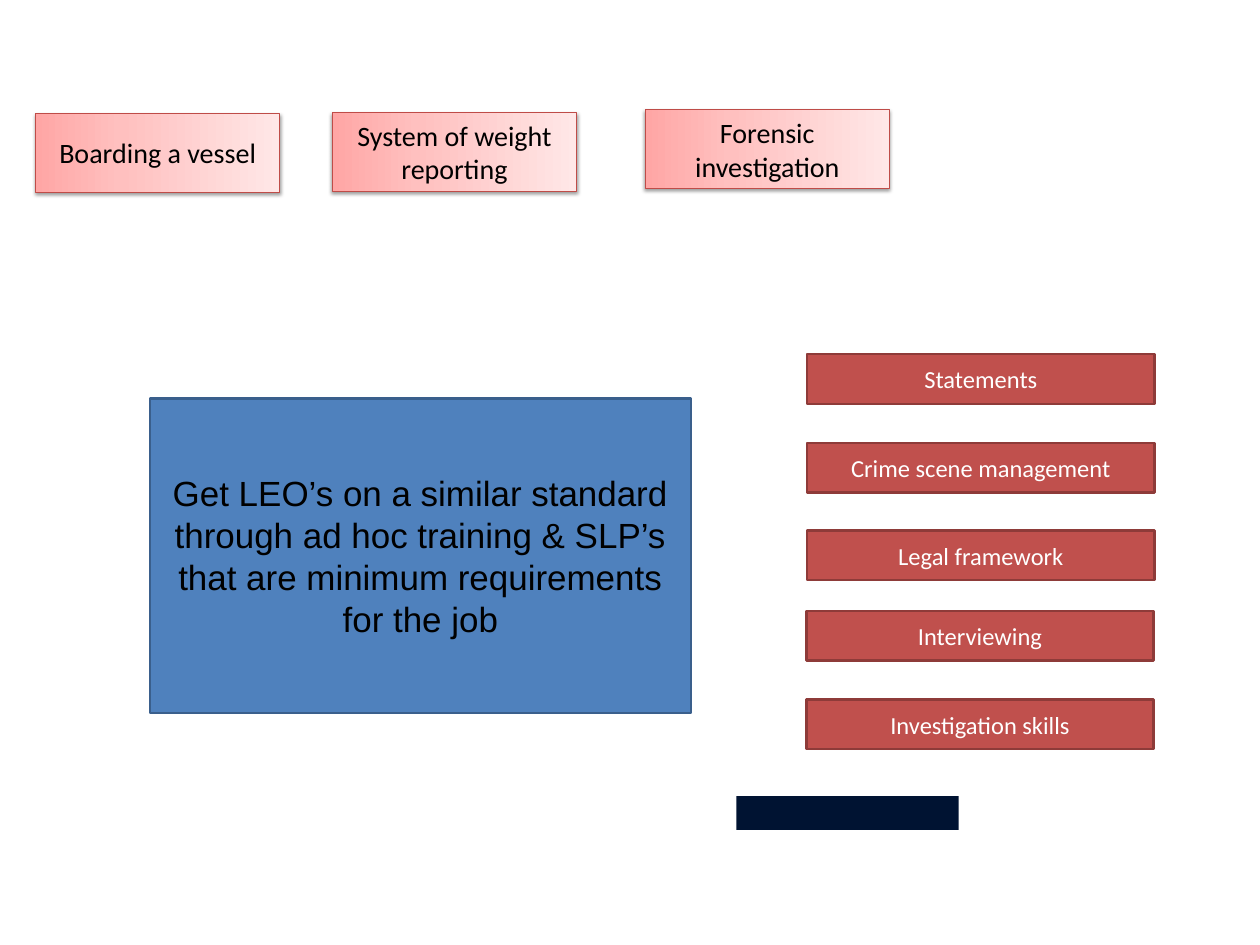
from copy import deepcopy

from lxml import etree
from pptx import Presentation
from pptx.dml.color import RGBColor
from pptx.enum.shapes import MSO_SHAPE
from pptx.enum.text import MSO_ANCHOR, PP_ALIGN
from pptx.oxml.ns import qn
from pptx.util import Inches, Pt

RECTANGLE = MSO_SHAPE.RECTANGLE
MIDDLE = MSO_ANCHOR.MIDDLE
CENTER = PP_ALIGN.CENTER

TASKS = [
    ("Boarding a vessel", 0.4, 1.28),
    ("System of weight reporting", 3.75, 1.27),
    ("Forensic investigation", 7.28, 1.24),
]
SKILLS = [
    ("Statements", 9.11, 4),
    ("Crime scene management", 9.11, 5),
    ("Legal framework", 9.11, 5.99),
    ("Interviewing", 9.1, 6.9),
    ("Investigation skills", 9.1, 7.9),
]
GOAL = ("Get LEO’s on a similar standard through ad hoc training & SLP’s "
        "that are minimum requirements for the job")
TASK_GRADIENT = [(0, "FFA6A5"), (0.35, "FFC0BF"), (1, "FFE7E7")]


def color(hex_code):
    """Turn a hex string into a colour."""
    return RGBColor.from_string(hex_code)


def add_block(slide, box, fill, line=None, line_width=2):
    """Add a flat rectangle in the given box."""
    block = slide.shapes.add_shape(RECTANGLE, *(Inches(length) for length in box))
    block.shadow.inherit = False
    block.fill.solid()
    block.fill.fore_color.rgb = color(fill)
    if line:
        block.line.color.rgb = color(line)
        block.line.width = Pt(line_width)
    else:
        block.line.fill.background()
    return block


def write_label(block, text, font, size, text_color):
    """Write centred text in a block."""
    frame = block.text_frame
    frame.word_wrap = True
    frame.vertical_anchor = MIDDLE
    paragraph = frame.paragraphs[0]
    paragraph.alignment = CENTER
    run = paragraph.add_run()
    run.text = text
    run.font.name = font
    run.font.size = Pt(size)
    run.font.color.rgb = color(text_color)


def shade(block, gradient):
    """Give a block a left-to-right gradient of three colours."""
    block.fill.gradient()
    block.fill.gradient_angle = 0
    stop_list = block.element.spPr.find(qn("a:gradFill")).find(qn("a:gsLst"))
    stop_list.append(deepcopy(stop_list[-1]))
    for stop, (position, hex_code) in zip(block.fill.gradient_stops, gradient):
        stop.position = position
        stop.color.rgb = color(hex_code)


def cast_shadow(block):
    """Give a block a soft shadow below."""
    effects = block.element.spPr.find(qn("a:effectLst"))
    shadow = etree.SubElement(
        effects, qn("a:outerShdw"), blurRad=str(Pt(3.1)), dist=str(Pt(1.6)),
        dir="5400000", rotWithShape="0")
    black = etree.SubElement(shadow, qn("a:srgbClr"), val="000000")
    etree.SubElement(black, qn("a:alpha"), val="38000")


def add_task(slide, text, box):
    """Add one shaded task card."""
    card = add_block(slide, box, "FFC0BF", "BF4C48", 0.75)
    shade(card, TASK_GRADIENT)
    cast_shadow(card)
    write_label(card, text, "Calibri", 22.8, "000000")


def add_skill(slide, text, box):
    """Add one red skill bar."""
    bar = add_block(slide, box, "C0504D", "8E3B39")
    write_label(bar, text, "Calibri", 19.9, "FFFFFF")


def add_goal(slide, box):
    """Add the blue goal panel."""
    panel = add_block(slide, box, "4F81BD", "3A5F8C")
    write_label(panel, GOAL, "Arial", 28.4, "000000")


def main():
    """Build the slide and save it."""
    presentation = Presentation()
    presentation.slide_width = Inches(14.22)
    presentation.slide_height = Inches(10.67)
    slide = presentation.slides.add_slide(presentation.slide_layouts[6])
    add_block(slide, (8.31, 8.99, 2.51, 0.38), "001332")
    add_goal(slide, (1.69, 4.5, 6.11, 3.55))
    for text, left, top in SKILLS:
        add_skill(slide, text, (left, top, 3.92, 0.56))
    for text, left, top in TASKS:
        add_task(slide, text, (left, top, 2.76, 0.89))
    presentation.save("out.pptx")


if __name__ == "__main__":
    main()
